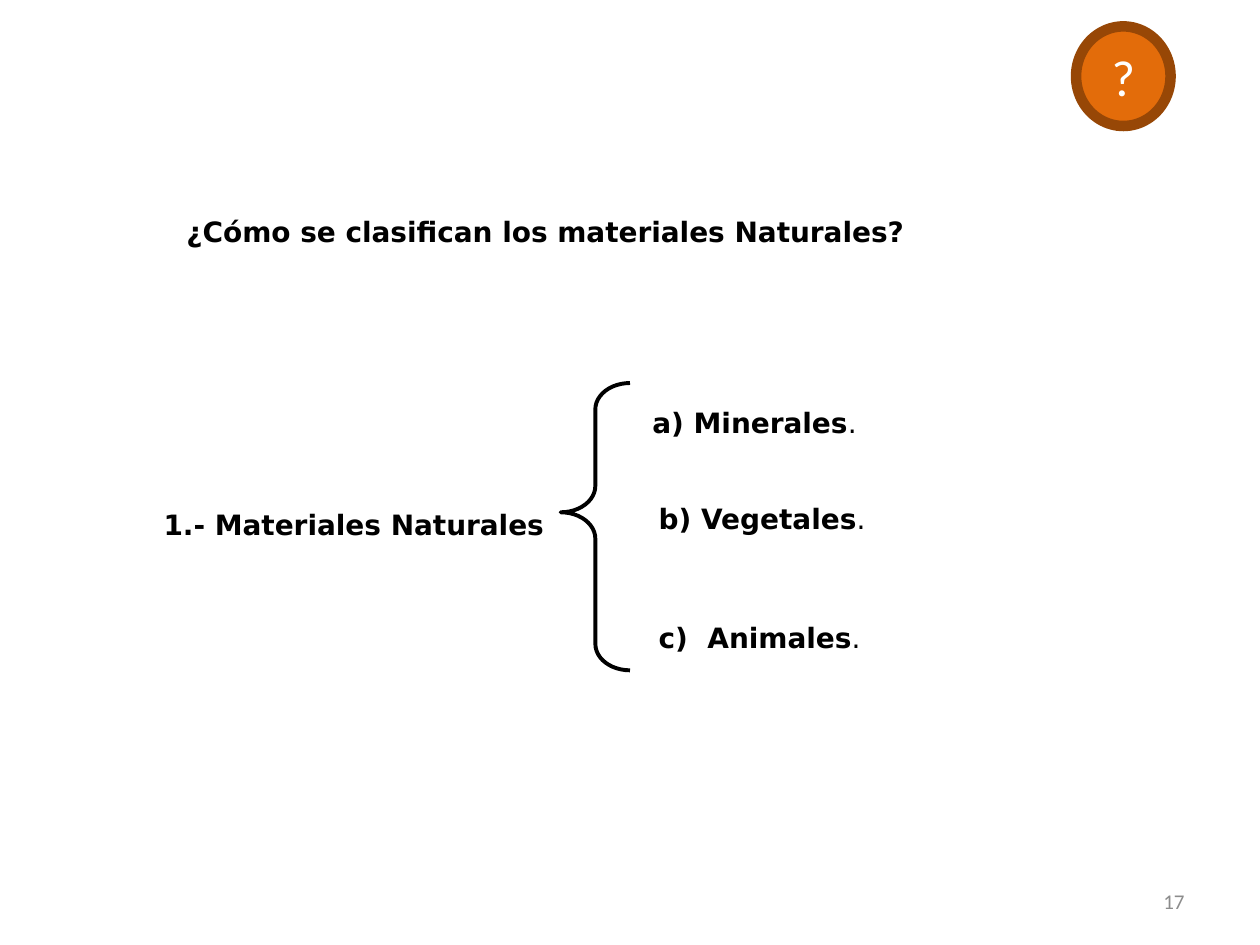
"""Build a slide that classifies natural materials with a brace diagram."""
from dataclasses import dataclass

from pptx import Presentation
from pptx.dml.color import RGBColor
from pptx.enum.shapes import MSO_SHAPE as Shp
from pptx.enum.text import MSO_ANCHOR as Anchor, MSO_AUTO_SIZE as AutoSize, PP_ALIGN as Align
from pptx.util import Inches, Pt

COLS, ROWS = 100, 75
COLORS = {"ink": "000000", "muted": "8C8C8C", "badge": "E36C0A",
          "badge_edge": "974706", "light": "FFFFFF"}
BODY, PLAIN = "DejaVu Sans", "Calibri"

prs = Presentation()
prs.slide_width, prs.slide_height = Inches(10), Inches(7.5)


@dataclass
class Box:
    """Place on the grid, in columns and rows."""
    col: float
    row: float
    cols: float
    rows: float

    def emu(self) -> tuple:
        """Return left, top, width and height in slide units."""
        cw, rh = prs.slide_width / COLS, prs.slide_height / ROWS
        return tuple(round(v) for v in (self.col * cw, self.row * rh, self.cols * cw, self.rows * rh))


@dataclass
class Label:
    """Bold wording on the grid, with an optional regular ending."""
    box: Box
    text: str
    tail: str = ""
    spacing: float = 1.0


def color(name: str) -> RGBColor:
    """Look up a named colour."""
    return RGBColor.from_string(COLORS[name])


def add_run(p, text: str, size: float, font: str, ink: str, bold: bool = False) -> None:
    """Append one formatted run to a paragraph."""
    r = p.add_run()
    r.text = text
    r.font.size, r.font.name, r.font.bold = Pt(size), font, bold
    r.font.color.rgb = color(ink)


def setup_text(sp, anchor: Anchor, align: Align):
    """Prepare a text frame and return its first paragraph."""
    tf = sp.text_frame
    tf.word_wrap, tf.auto_size, tf.vertical_anchor = True, AutoSize.NONE, anchor
    p = tf.paragraphs[0]
    p.alignment = align
    return p


def add_label(slide, label: Label) -> None:
    """Draw one label of the diagram."""
    sp = slide.shapes.add_textbox(*label.box.emu())
    p = setup_text(sp, Anchor.TOP, Align.LEFT)
    p.line_spacing = label.spacing
    add_run(p, label.text, 16, BODY, "ink", True)
    if label.tail:
        add_run(p, label.tail, 16, BODY, "ink")


def add_outline(slide, kind: Shp, box: Box, line: str, width: float):
    """Draw an outlined preset shape without fill or shadow."""
    sp = slide.shapes.add_shape(kind, *box.emu())
    sp.shadow.inherit = False
    sp.fill.background()
    sp.line.color.rgb, sp.line.width = color(line), Pt(width)
    return sp


def add_title(slide, box: Box, text: str) -> None:
    """Move and format the title placeholder."""
    sp = slide.shapes.title
    sp.left, sp.top, sp.width, sp.height = box.emu()
    p = setup_text(sp, Anchor.TOP, Align.LEFT)
    p.line_spacing = Pt(15.6)
    add_run(p, text, 16, BODY, "ink", True)


def add_badge(slide, box: Box) -> None:
    """Draw the round question badge."""
    sp = add_outline(slide, Shp.OVAL, box, "badge_edge", 6)
    sp.fill.solid()
    sp.fill.fore_color.rgb = color("badge")
    p = setup_text(sp, Anchor.MIDDLE, Align.CENTER)
    p.space_after = Pt(10)
    add_run(p, "?", 29, PLAIN, "light")


def add_page_number(slide, box: Box, number: str) -> None:
    """Draw the page number at the lower right."""
    p = setup_text(slide.shapes.add_textbox(*box.emu()), Anchor.MIDDLE, Align.RIGHT)
    add_run(p, number, 12, PLAIN, "muted")


LABELS = [
    Label(Box(50.8, 30.4, 31.5, 5), "a) Minerales", ".", 1.5),
    Label(Box(12, 38.5, 32.4, 5), "1.- Materiales\u00a0Naturales".replace("\u00a0", " "), spacing=1.5),
    Label(Box(51.3, 39.3, 19.6, 3.7), "b) Vegetales", "."),
    Label(Box(51.3, 48.8, 19.6, 3.7), "c)  Animales", "."),
]


def main() -> None:
    """Assemble and save the slide."""
    slide = prs.slides.add_slide(prs.slide_layouts[5])
    add_title(slide, Box(13.8, 17, 74, 5.5), "¿Cómo se clasifican los materiales Naturales?")
    add_page_number(slide, Box(71.7, 69.5, 23.3, 4), "17")
    for label in LABELS:
        add_label(slide, label)
    brace = add_outline(slide, Shp.LEFT_BRACE, Box(44.5, 30.4, 5.5, 22.8), "ink", 2.25)
    brace.adjustments[0], brace.adjustments[1] = 0.38, 0.45
    add_badge(slide, Box(85.4, 2.1, 7.5, 7.9))
    prs.save("out.pptx")


if __name__ == "__main__":
    main()
